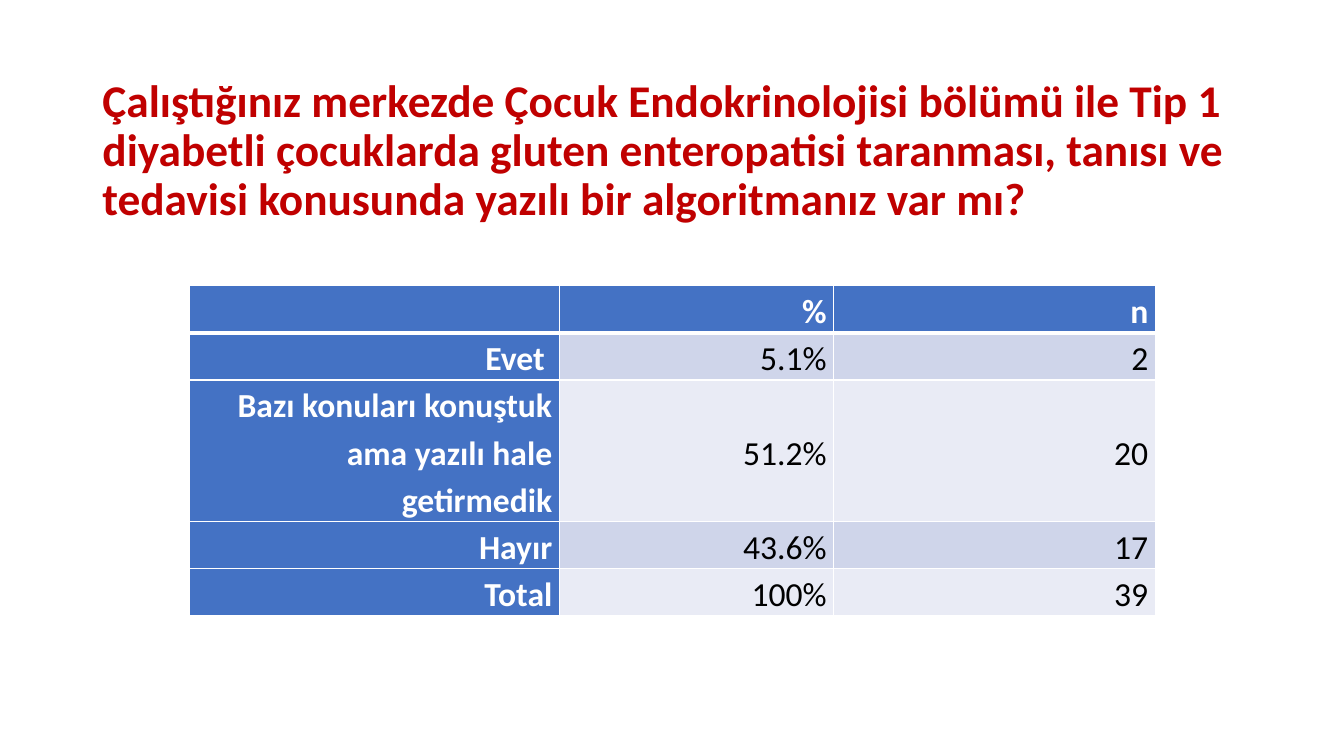
from lxml.etree import SubElement as Sub
from pptx import Presentation as Deck
from pptx.dml.color import RGBColor as Rgb
from pptx.enum.text import MSO_ANCHOR as Anchor, MSO_AUTO_SIZE as Fit, PP_ALIGN as Align
from pptx.oxml.ns import qn
from pptx.util import Pt

theme = {
    "font": "Calibri", "title": 32.4, "body": 24,
    "red": "C00000", "blue": "4472C4", "white": "FFFFFF", "black": "000000",
    "bands": ("E9EBF5", "CFD5EA"),
}


def write(frame, text, size, color, bold, align, space):
    frame.text = text
    para = frame.paragraphs[0]
    para.alignment = align
    para.line_spacing = space
    font = para.runs[0].font
    font.name = theme["font"]
    font.size = Pt(size)
    font.bold = bold
    font.color.rgb = Rgb.from_string(theme[color])


def edge(cell, widths):
    props = cell._tc.get_or_add_tcPr()
    for spot, (side, width) in enumerate(zip("LRTB", widths)):
        line = Sub(props, qn(f"a:ln{side}"), w=str(Pt(width)))
        fill = Sub(line, qn("a:solidFill"))
        Sub(fill, qn("a:srgbClr"), val=theme["white"])
        props.insert(spot, line)


deck = Deck()
deck.slide_width, deck.slide_height = Pt(960), Pt(540)
slide = deck.slides.add_slide(deck.slide_layouts[5])

title = slide.shapes.title
title.left, title.top, title.width, title.height = Pt(66), Pt(80), Pt(828), Pt(104.4)
frame = title.text_frame
frame.word_wrap = True
frame.auto_size = Fit.NONE
frame.vertical_anchor = Anchor.BOTTOM
frame.margin_bottom = Pt(23.3)
write(
    frame,
    "Çalıştığınız merkezde Çocuk Endokrinolojisi bölümü ile Tip 1 diyabetli "
    "çocuklarda gluten enteropatisi taranması, tanısı ve tedavisi konusunda "
    "yazılı bir algoritmanız var mı?",
    size=theme["title"], color="red", bold=True, align=Align.LEFT, space=0.9,
)

rows = [
    ("", "%", "n"),
    ("Evet ", "5.1%", "2"),
    ("Bazı konuları konuştuk ama yazılı hale getirmedik", "51.2%", "20"),
    ("Hayır", "43.6%", "17"),
    ("Total", "100%", "39"),
]
wide = (264, 196, 229.7)
high = (33.6, 33.6, 100.8, 33.6, 33.6)
table = slide.shapes.add_table(
    len(rows), len(wide), Pt(135.5), Pt(204), Pt(sum(wide)), Pt(sum(high))
).table
for col, width in zip(table.columns, wide):
    col.width = Pt(width)
table.first_col = True

for r, row in enumerate(rows):
    table.rows[r].height = Pt(high[r])
    for c, text in enumerate(row):
        cell = table.cell(r, c)
        head = r == 0 or c == 0
        cell.fill.solid()
        cell.fill.fore_color.rgb = Rgb.from_string(
            theme["blue"] if head else theme["bands"][r % 2]
        )
        edge(cell, (1, 1, 3 if r == 1 else 1, 3 if r == 0 else 1))
        cell.vertical_anchor = Anchor.MIDDLE
        cell.margin_left = cell.margin_right = Pt(5)
        cell.margin_top = cell.margin_bottom = 0
        if text:
            write(
                cell.text_frame, text, size=theme["body"],
                color="white" if head else "black", bold=head,
                align=Align.RIGHT, space=1.15,
            )

deck.save("out.pptx")
